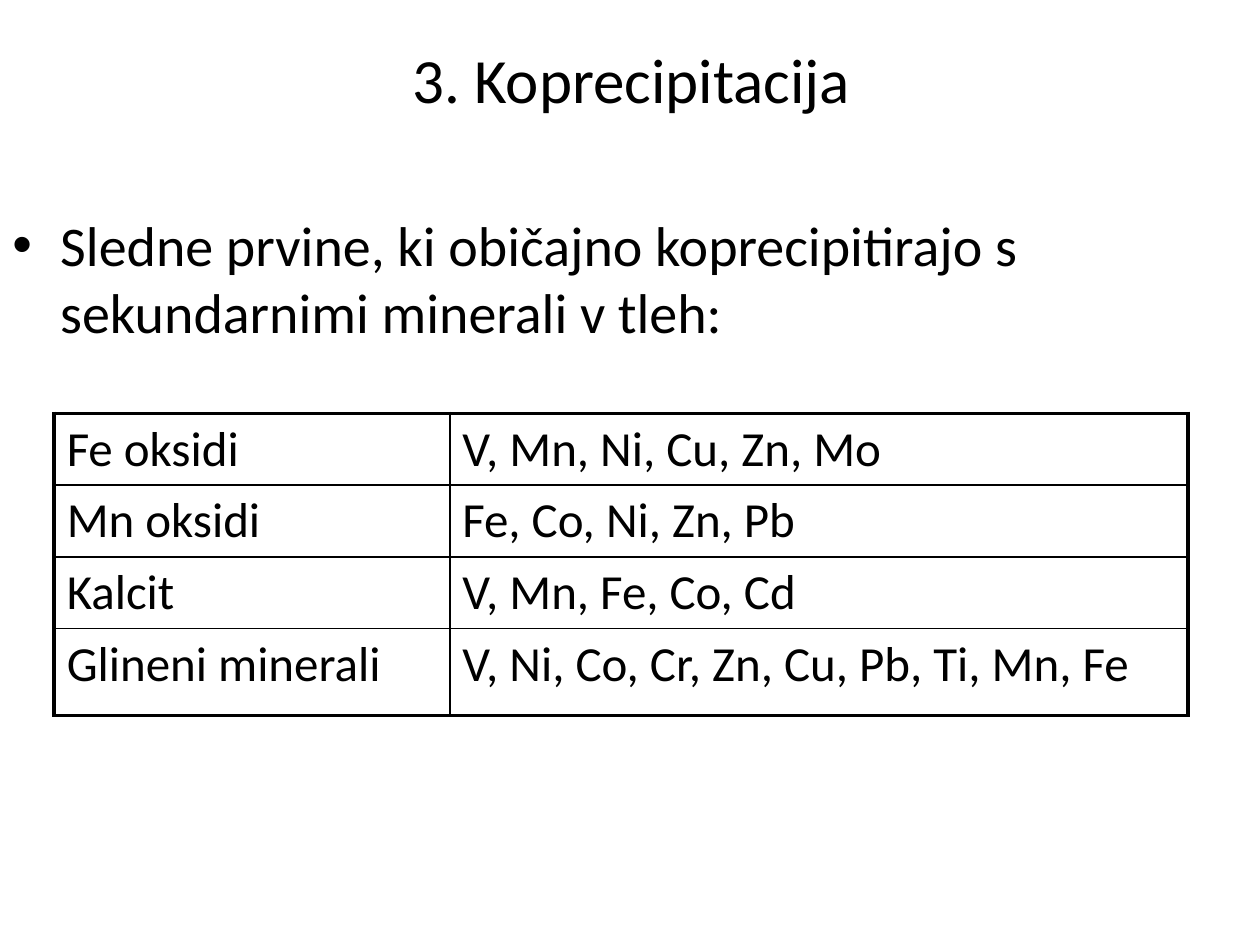
import pptx
import pptx.util
import pptx.dml.color
import pptx.enum.text
import pptx.oxml
import pptx.oxml.ns
import lxml.etree

Inches = pptx.util.Inches
Pt = pptx.util.Pt
qn = pptx.oxml.ns.qn

FONT = "Calibri"
BLACK = "000000"
ROWS = [
    ("Fe oksidi", "V, Mn, Ni, Cu, Zn, Mo"),
    ("Mn oksidi", "Fe, Co, Ni, Zn, Pb"),
    ("Kalcit", "V, Mn, Fe, Co, Cd"),
    ("Glineni minerali", "V, Ni, Co, Cr, Zn, Cu, Pb, Ti, Mn, Fe"),
]
COL_WIDTHS = [3.14, 5.86]
ROW_HEIGHTS = [0.57, 0.57, 0.57, 0.69]


def color(value):
    return pptx.dml.color.RGBColor.from_string(value)


def add_run(p, text, size):
    r = p.add_run()
    r.text = text
    r.font.name = FONT
    r.font.size = Pt(size)
    r.font.color.rgb = color(BLACK)


def place(sp, box):
    sp.left, sp.top, sp.width, sp.height = (Inches(v) for v in box)


def add_title(s, box):
    sp = s.shapes.title
    place(sp, box)
    tf = sp.text_frame
    tf.vertical_anchor = pptx.enum.text.MSO_ANCHOR.MIDDLE
    p = tf.paragraphs[0]
    p.alignment = pptx.enum.text.PP_ALIGN.CENTER
    add_run(p, "3. Koprecipitacija", 36)


def add_body(s, box):
    sp = s.shapes.add_textbox(*(Inches(v) for v in box))
    tf = sp.text_frame
    tf.word_wrap = True
    p = tf.paragraphs[0]
    p.space_before = Pt(6.4)
    pPr = p._p.get_or_add_pPr()
    pPr.set("marL", str(Inches(0.38)))
    pPr.set("indent", str(-Inches(0.38)))
    lxml.etree.SubElement(pPr, qn("a:buFont"), typeface="Arial")
    lxml.etree.SubElement(pPr, qn("a:buChar"), char="•")
    add_run(p, "Sledne prvine, ki običajno koprecipitirajo s sekundarnimi minerali v tleh:", 32)


def set_borders(cell, widths):
    tcPr = cell._tc.get_or_add_tcPr()
    for i, (side, width) in enumerate(widths.items()):
        ln = lxml.etree.Element(qn("a:ln" + side), w=str(Pt(width)))
        fill = lxml.etree.SubElement(ln, qn("a:solidFill"))
        lxml.etree.SubElement(fill, qn("a:srgbClr"), val=BLACK)
        tcPr.insert(i, ln)


def add_minerals_table(s, box):
    last_row, last_col = len(ROWS) - 1, len(COL_WIDTHS) - 1
    frame = s.shapes.add_table(len(ROWS), len(COL_WIDTHS), *(Inches(v) for v in box))
    table = frame.table
    table.first_row = False
    table.horz_banding = False
    for col, width in zip(table.columns, COL_WIDTHS):
        col.width = Inches(width)
    for row, height in zip(table.rows, ROW_HEIGHTS):
        row.height = Inches(height)
    for i, texts in enumerate(ROWS):
        for j, text in enumerate(texts):
            cell = table.cell(i, j)
            cell.fill.background()
            add_run(cell.text_frame.paragraphs[0], text, 28)
            outer = {"L": j == 0, "R": j == last_col, "T": i == 0, "B": i == last_row}
            set_borders(cell, {side: 2.25 if edge else 1 for side, edge in outer.items()})


def main():
    prs = pptx.Presentation()
    prs.slide_width = Inches(10)
    prs.slide_height = Inches(7.5)
    s = prs.slides.add_slide(prs.slide_layouts.get_by_name("Title Only"))
    s.background.fill.solid()
    s.background.fill.fore_color.rgb = color("FFFFFF")
    add_title(s, (0.51, 0, 9, 1.25))
    add_body(s, (0, 1.62, 10, 2.99))
    add_minerals_table(s, (0.43, 3.28, sum(COL_WIDTHS), sum(ROW_HEIGHTS)))
    prs.save("out.pptx")


if __name__ == "__main__":
    main()
